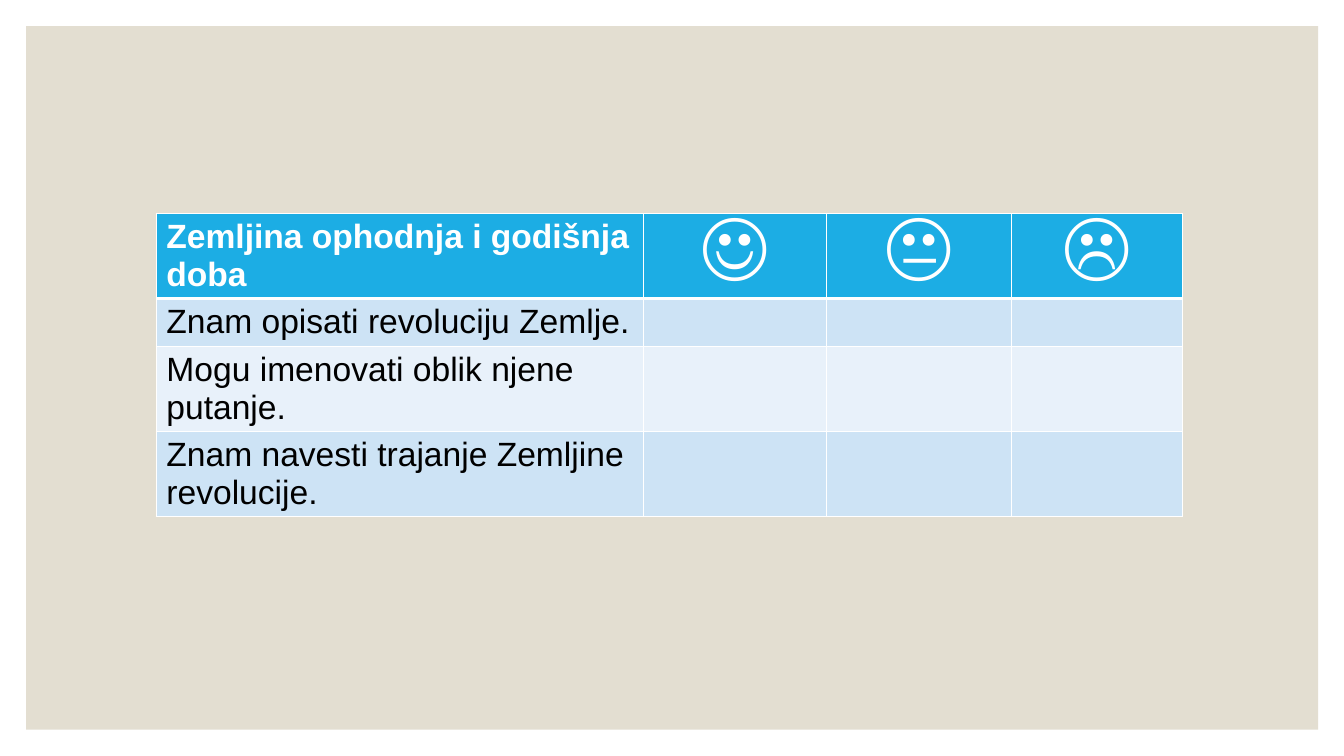
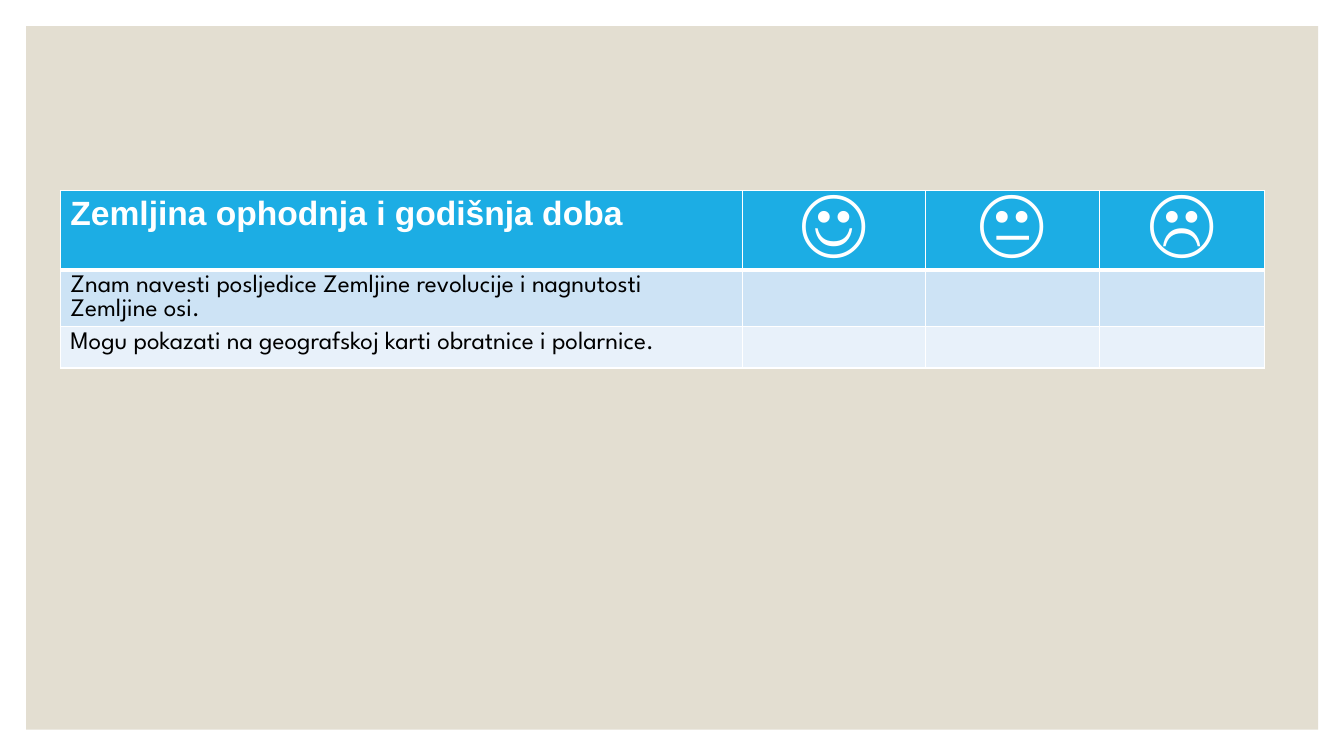
"""Build two self-assessment slides on the Earth's revolution and the seasons."""
from dataclasses import dataclass

from lxml.etree import SubElement
from pptx import Presentation
from pptx.dml.color import RGBColor
from pptx.enum.shapes import MSO_SHAPE
from pptx.enum.text import PP_ALIGN
from pptx.oxml.ns import qn
from pptx.util import Cm, Pt


@dataclass(frozen=True)
class Theme:
    panel: str = "E3DED1"
    header: str = "1CADE4"
    bands: tuple = ("CDE3F5", "E8F1FA")
    light: str = "FFFFFF"
    dark: str = "000000"
    title_font: str = "Arial"
    face_font: str = "League Spartan"
    title_size: int = 24
    face_size: int = 54
    thin: int = 1
    thick: int = 3


theme = Theme()
TITLE = "Zemljina ophodnja i godišnja doba"
FACES = ["☺", "😐", "☹"]
ROW_HEIGHT = 1.04

SLIDES = [
    {
        "left": 3.94, "top": 5.38, "cols": [12.27, 4.62, 4.67, 4.29],
        "font": theme.title_font, "size": 24,
        "statements": [
            "Znam opisati revoluciju Zemlje.",
            "Mogu imenovati oblik njene putanje.",
            "Znam navesti trajanje Zemljine revolucije.",
        ],
    },
    {
        "left": 1.52, "top": 4.8, "cols": [17.19, 4.62, 4.37, 4.16],
        "font": theme.face_font, "size": 18,
        "statements": [
            "Znam navesti posljedice Zemljine revolucije i nagnutosti Zemljine osi.",
            "Mogu pokazati na geografskoj karti obratnice i polarnice.",
        ],
    },
]


def style_cell(cell, fill, top, bottom):
    tcPr = cell._tc.get_or_add_tcPr()
    widths = {"a:lnL": theme.thin, "a:lnR": theme.thin, "a:lnT": top, "a:lnB": bottom}
    for tag, width in widths.items():
        ln = SubElement(tcPr, qn(tag), w=str(Pt(width)))
        SubElement(SubElement(ln, qn("a:solidFill")), qn("a:srgbClr"), val=theme.light)
    cell.fill.solid()
    cell.fill.fore_color.rgb = RGBColor.from_string(fill)


def write_cell(cell, text, font, size, color, bold, align):
    p = cell.text_frame.paragraphs[0]
    p.alignment = align
    r = p.add_run()
    r.text = text
    r.font.name = font
    r.font.size = Pt(size)
    r.font.bold = bold
    r.font.color.rgb = RGBColor.from_string(color)


prs = Presentation()
prs.slide_width = Cm(33.87)
prs.slide_height = Cm(19.05)

for page in SLIDES:
    s = prs.slides.add_slide(prs.slide_layouts[6])
    panel = s.shapes.add_shape(MSO_SHAPE.RECTANGLE, Cm(0.66), Cm(0.66), Cm(32.56), Cm(17.73))
    panel.shadow.inherit = False
    panel.fill.solid()
    panel.fill.fore_color.rgb = RGBColor.from_string(theme.panel)
    panel.line.fill.background()

    cols, statements = page["cols"], page["statements"]
    count = len(statements) + 1
    table = s.shapes.add_table(
        count, len(cols), Cm(page["left"]), Cm(page["top"]),
        Cm(sum(cols)), Cm(ROW_HEIGHT * count),
    ).table
    for column, width in zip(table.columns, cols):
        column.width = Cm(width)

    for i, row in enumerate(table.rows):
        fill = theme.bands[(i - 1) % 2] if i else theme.header
        for cell in row.cells:
            style_cell(cell, fill, theme.thick if i == 1 else theme.thin,
                       theme.thin if i else theme.thick)

    write_cell(table.cell(0, 0), TITLE, theme.title_font, theme.title_size,
               theme.light, True, PP_ALIGN.LEFT)
    for j, face in enumerate(FACES, 1):
        write_cell(table.cell(0, j), face, theme.face_font, theme.face_size,
                   theme.light, True, PP_ALIGN.CENTER)
    for i, statement in enumerate(statements, 1):
        write_cell(table.cell(i, 0), statement, page["font"], page["size"],
                   theme.dark, False, PP_ALIGN.LEFT)

prs.save("out.pptx")
